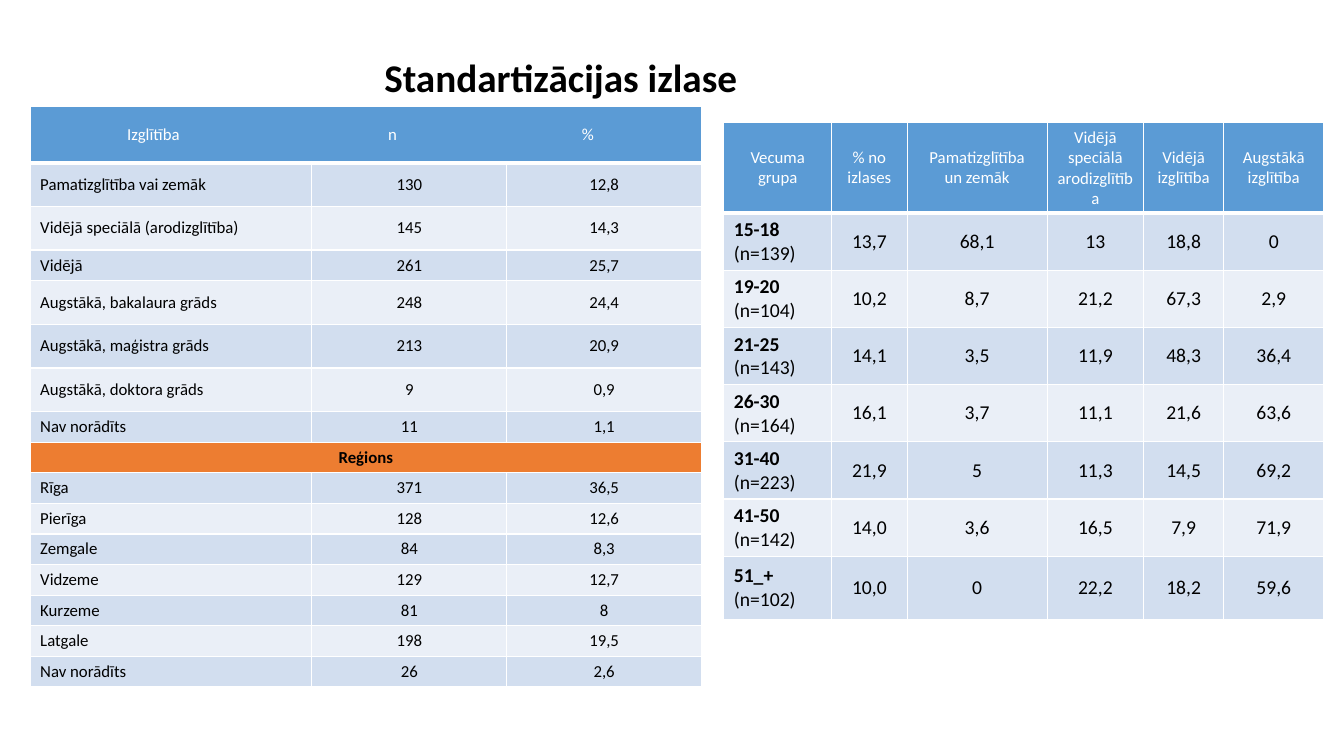
from pptx import Presentation
from pptx.dml.color import RGBColor
from pptx.enum.text import MSO_ANCHOR, PP_ALIGN
from pptx.oxml import parse_xml
from pptx.oxml.ns import nsdecls
from pptx.util import Cm, Pt

BLACK = RGBColor(0x00, 0x00, 0x00)
WHITE = RGBColor(0xFF, 0xFF, 0xFF)
BLUE = RGBColor(0x5B, 0x9B, 0xD5)
ORANGE = RGBColor(0xED, 0x7D, 0x31)
BANDS = RGBColor(0xEA, 0xEF, 0xF7), RGBColor(0xD2, 0xDE, 0xEF)

LEVELS = [
    ("Izglītība\tn\t%",),
    ("Pamatizglītība vai zemāk", "130", "12,8"),
    ("Vidējā speciālā (arodizglītība)", "145", "14,3"),
    ("Vidējā", "261", "25,7"),
    ("Augstākā, bakalaura grāds", "248", "24,4"),
    ("Augstākā, maģistra grāds", "213", "20,9"),
    ("Augstākā, doktora grāds", "9", "0,9"),
    ("Nav norādīts", "11", "1,1"),
    ("Reģions",),
    ("Rīga", "371", "36,5"),
    ("Pierīga", "128", "12,6"),
    ("Zemgale", "84", "8,3"),
    ("Vidzeme", "129", "12,7"),
    ("Kurzeme", "81", "8"),
    ("Latgale", "198", "19,5"),
    ("Nav norādīts", "26", "2,6"),
]
AGES = [
    ("Vecuma\ngrupa", "% no\nizlases", "Pamatizglītība\nun zemāk",
     "Vidējā\nspeciālā\narodizglītība", "Vidējā\nizglītība",
     "Augstākā\nizglītība"),
    ("15-18 (n=139)", "13,7", "68,1", "13", "18,8", "0"),
    ("19-20 (n=104)", "10,2", "8,7", "21,2", "67,3", "2,9"),
    ("21-25 (n=143)", "14,1", "3,5", "11,9", "48,3", "36,4"),
    ("26-30 (n=164)", "16,1", "3,7", "11,1", "21,6", "63,6"),
    ("31-40 (n=223)", "21,9", "5", "11,3", "14,5", "69,2"),
    ("41-50 (n=142)", "14,0", "3,6", "16,5", "7,9", "71,9"),
    ("51_+ (n=102)", "10,0", "0", "22,2", "18,2", "59,6"),
]


class Sheet:
    def __init__(self, slide):
        self.slide = slide
        self.style = {"name": "Calibri", "size": Pt(12), "bold": False}

    def words(self, para, text, ink=BLACK, **form):
        run = para.add_run()
        run.text = text
        for key, value in {**self.style, **form}.items():
            setattr(run.font, key, value)
        run.font.color.rgb = ink

    def title(self, text, left, top, width, height):
        box = self.slide.shapes.add_textbox(
            Cm(left), Cm(top), Cm(width), Cm(height))
        box.text_frame.word_wrap = True
        para = box.text_frame.paragraphs[0]
        para.alignment = PP_ALIGN.CENTER
        self.words(para, text, size=Pt(28), bold=True)

    def table(self, left, top, widths, heights):
        table = self.slide.shapes.add_table(
            len(heights), len(widths), Cm(left), Cm(top),
            Cm(sum(widths)), Cm(sum(heights))).table
        table.first_row = table.horz_banding = False
        for col, width in zip(table.columns, widths):
            col.width = Cm(width)
        for row, height in zip(table.rows, heights):
            row.height = Cm(height)
        return table

    def cell(self, cell, fill, head=False):
        props = cell._tc.get_or_add_tcPr()
        for side in "LRTB":
            wide = Pt(3 if head and side == "B" else 1)
            props.append(parse_xml(
                f'<a:ln{side} {nsdecls("a")} w="{wide}"><a:solidFill>'
                f'<a:srgbClr val="{WHITE}"/></a:solidFill></a:ln{side}>'))
        cell.vertical_anchor = MSO_ANCHOR.MIDDLE
        cell.fill.solid()
        cell.fill.fore_color.rgb = fill

    def lines(self, cell, text, align, ink=BLACK, **form):
        frame = cell.text_frame
        for num, line in enumerate(text.split("\n")):
            para = frame.add_paragraph() if num else frame.paragraphs[0]
            para.alignment = align
            self.words(para, line, ink, **form)

    def tabs(self, para, stops):
        marks = "".join(f'<a:tab pos="{Cm(stop)}" algn="l"/>' for stop in stops)
        para._p.get_or_add_pPr().append(
            parse_xml(f'<a:tabLst {nsdecls("a")}>{marks}</a:tabLst>'))

    def levels(self, rows):
        tall = {0: 1.41, **dict.fromkeys((1, 2, 4, 5, 6), 1.1)}
        heights = [tall.get(r, 0.77) for r in range(len(rows))]
        table = self.table(0.76, 2.69, [7.1, 4.91, 4.91], heights)
        for r, row in enumerate(rows):
            single = len(row) == 1
            fill = BANDS[r % 2]
            if single:
                fill = ORANGE if r else BLUE
                table.cell(r, 0).merge(table.cell(r, 2))
            for c in range(3):
                self.cell(table.cell(r, c), fill, r == 0)
            for c, text in enumerate(row):
                cell = table.cell(r, c)
                if r == 0:
                    para = cell.text_frame.paragraphs[0]
                    self.tabs(para, [2.19, 8.77, 13.65])
                    self.words(para, "\t" + text, WHITE)
                else:
                    mid = c or single
                    align = PP_ALIGN.CENTER if mid else PP_ALIGN.LEFT
                    self.lines(cell, text, align, bold=single)

    def ages(self, rows):
        heights = [2.26] + [1.43] * 6 + [1.6]
        widths = [2.72, 1.9, 3.53, 2.43, 2.02, 2.52]
        table = self.table(18.24, 3.08, widths, heights)
        for r, row in enumerate(rows):
            for c, text in enumerate(row):
                cell = table.cell(r, c)
                self.cell(cell, BANDS[r % 2] if r else BLUE, r == 0)
                if r == 0:
                    self.lines(cell, text, PP_ALIGN.CENTER, WHITE)
                elif c:
                    self.lines(cell, text, PP_ALIGN.CENTER, size=Pt(14))
                else:
                    group, count = text.split()
                    para = cell.text_frame.paragraphs[0]
                    self.words(para, group + " ", size=Pt(14), bold=True)
                    self.words(para, count, size=Pt(14))


def main():
    deck = Presentation()
    deck.slide_width, deck.slide_height = Cm(33.87), Cm(19.05)
    sheet = Sheet(deck.slides.add_slide(deck.slide_layouts[6]))
    sheet.levels(LEVELS)
    sheet.title("Standartizācijas izlase", 5.66, 1.22, 16.94, 1.45)
    sheet.ages(AGES)
    deck.save("out.pptx")


if __name__ == "__main__":
    main()
